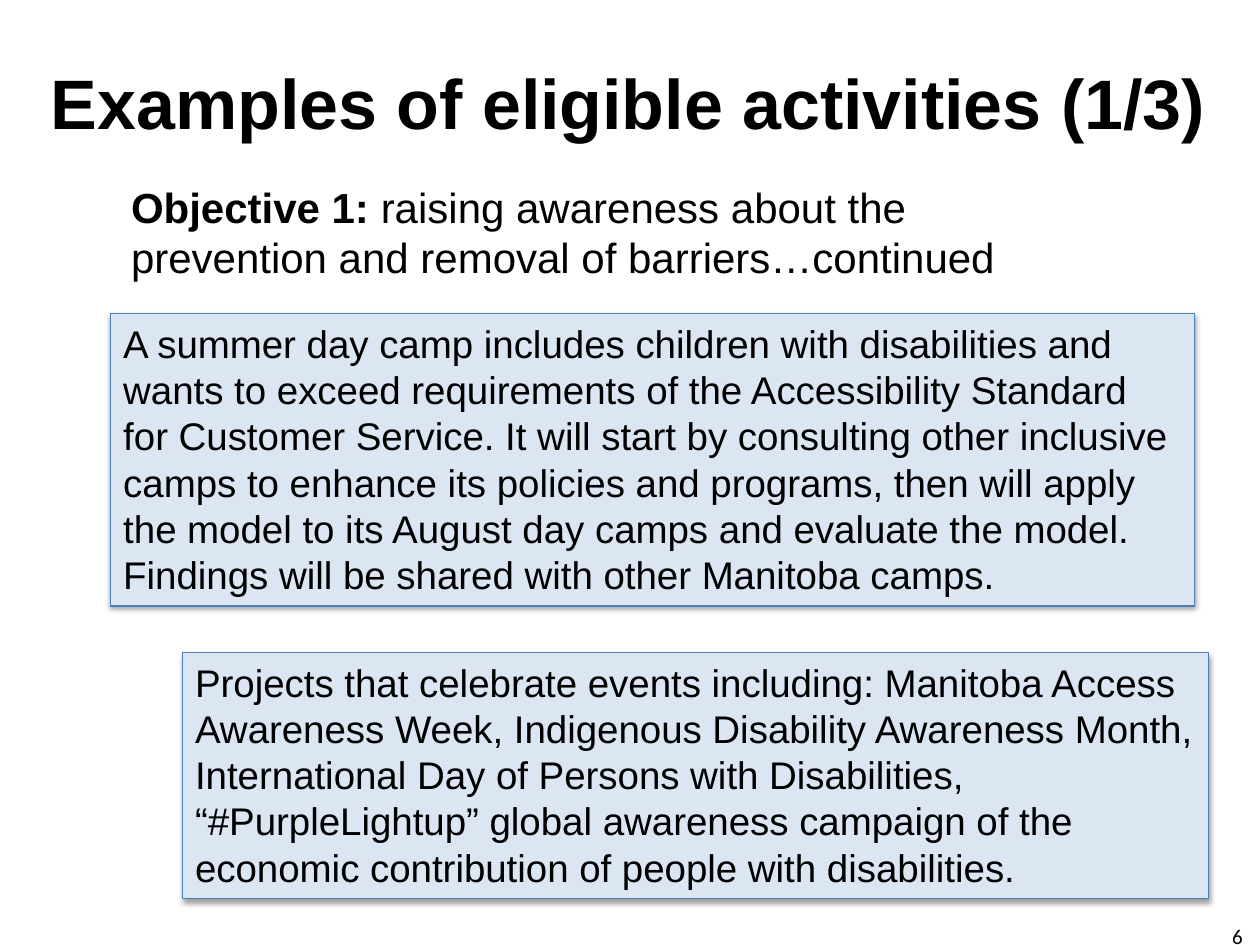
from lxml import etree
from pptx import Presentation
from pptx.dml.color import RGBColor
from pptx.enum.shapes import MSO_SHAPE
from pptx.enum.text import MSO_ANCHOR, MSO_AUTO_SIZE, PP_ALIGN
from pptx.oxml.ns import qn
from pptx.util import Inches, Pt

RECTANGLE = MSO_SHAPE.RECTANGLE
TOP = MSO_ANCHOR.TOP
GROW = MSO_AUTO_SIZE.SHAPE_TO_FIT_TEXT
LEFT, CENTER = PP_ALIGN.LEFT, PP_ALIGN.CENTER

BLACK = RGBColor(0x00, 0x00, 0x00)
PALE_BLUE = RGBColor(0xDC, 0xE6, 0xF2)
BLUE = RGBColor(0x4B, 0x7E, 0xBC)

TITLE_BOX = (0.13, 0.42, 9.71, 0.96)
OBJECTIVE_BOX = (0.99, 1.39, 7.9, 1.08)
NUMBER_BOX = (9.68, 7.28, 0.4, 0.4)

EXAMPLES = [
    ((0.88, 2.49, 8.6, 2.32),
     "A summer day camp includes children with disabilities and wants to exceed "
     "requirements of the Accessibility Standard for Customer Service. It will start "
     "by consulting other inclusive camps to enhance its policies and programs, then "
     "will apply the model to its August day camps and evaluate the model. Findings "
     "will be shared with other Manitoba camps."),
    ((1.45, 5.18, 8.14, 1.95),
     "Projects that celebrate events including: Manitoba Access Awareness Week, "
     "Indigenous Disability Awareness Month, International Day of Persons with "
     "Disabilities, “#PurpleLightup” global awareness campaign of the economic "
     "contribution of people with disabilities."),
]


def inches(box):
    return [Inches(length) for length in box]


def add_span(para, text, size, bold=False, font="Arial"):
    span = para.add_run()
    span.text = text
    span.font.name = font
    span.font.size = Pt(size)
    span.font.bold = bold
    span.font.color.rgb = BLACK


def add_soft_shadow(shape):
    """Replace the theme shadow with a faint one straight below the shape."""
    shape.shadow.inherit = False
    effects = shape._element.spPr.find(qn("a:effectLst"))
    shadow = etree.SubElement(effects, qn("a:outerShdw"), blurRad=str(Pt(3.1)),
                              dist=str(Pt(1.6)), dir="5400000", rotWithShape="0")
    color = etree.SubElement(shadow, qn("a:srgbClr"), val="000000")
    etree.SubElement(color, qn("a:alpha"), val="38000")


def place_title(page, box):
    title = page.shapes.title
    title.left, title.top, title.width, title.height = inches(box)
    frame = title.text_frame
    frame.word_wrap = True
    frame.vertical_anchor = TOP
    para = frame.paragraphs[0]
    para.alignment = CENTER
    add_span(para, "Examples of eligible activities (1/3)", 40, bold=True)


def add_objective(page, box):
    frame = page.shapes.add_textbox(*inches(box)).text_frame
    frame.word_wrap = True
    frame.margin_left = frame.margin_right = Inches(0.05)
    para = frame.paragraphs[0]
    add_span(para, "Objective 1: ", 24, bold=True)
    add_span(para, "raising awareness about the prevention and removal of "
                   "barriers…continued", 24)


def add_example(page, box, text):
    panel = page.shapes.add_shape(RECTANGLE, *inches(box))
    panel.fill.solid()
    panel.fill.fore_color.rgb = PALE_BLUE
    panel.line.color.rgb = BLUE
    panel.line.width = Pt(0.75)
    add_soft_shadow(panel)
    frame = panel.text_frame
    frame.word_wrap = True
    frame.auto_size = GROW
    frame.vertical_anchor = TOP
    para = frame.paragraphs[0]
    para.alignment = LEFT
    add_span(para, text, 22)


def add_page_number(page, box):
    frame = page.shapes.add_textbox(*inches(box)).text_frame
    frame.word_wrap = True
    add_span(frame.paragraphs[0], "6", 12, font="Calibri")


def main():
    deck = Presentation()
    deck.slide_width, deck.slide_height = Inches(10), Inches(7.5)
    page = deck.slides.add_slide(deck.slide_layouts.get_by_name("Title Only"))
    place_title(page, TITLE_BOX)
    add_objective(page, OBJECTIVE_BOX)
    for box, text in EXAMPLES:
        add_example(page, box, text)
    add_page_number(page, NUMBER_BOX)
    deck.save("out.pptx")


if __name__ == "__main__":
    main()
